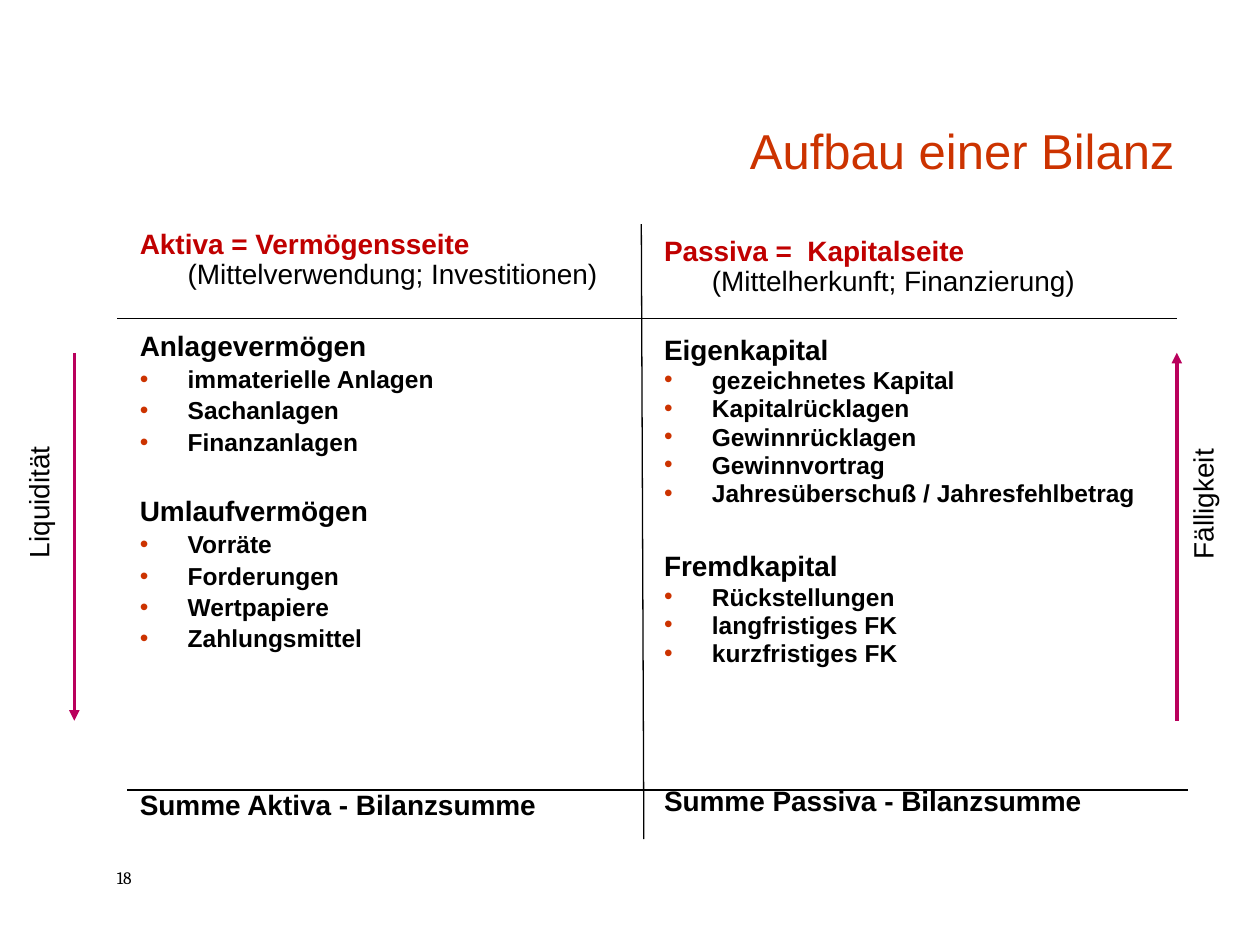
from dataclasses import dataclass

from lxml.etree import SubElement
from pptx import Presentation
from pptx.dml.color import RGBColor
from pptx.enum.shapes import MSO_CONNECTOR
from pptx.enum.text import MSO_ANCHOR, MSO_AUTO_SIZE, PP_ALIGN
from pptx.oxml.ns import qn
from pptx.util import Inches, Pt

BLACK = "000000"
ORANGE = "CC3300"
RED = "C00000"
MAGENTA = "B9005C"
HEADING_SIZE = 16
ITEM_SIZE = 14
INDENT = 0.38


@dataclass
class Box:
    left: float
    top: float
    width: float
    height: float


@dataclass
class Group:
    heading: str
    items: list[str]
    gap: float


@dataclass
class BalanceSide:
    box: Box
    name: str
    purpose: str
    break_after_name: bool
    groups: list[Group]
    spacing: float


@dataclass
class Line:
    start: tuple[float, float]
    end: tuple[float, float]
    color: str = BLACK
    width: float = 0.75
    arrow: bool = False


@dataclass
class Label:
    box: Box
    text: str
    size: float = HEADING_SIZE
    font: str = "Arial"
    vertical: bool = False


SIDES = [
    BalanceSide(
        Box(10.1, 23.73, 43.3, 70), "Aktiva = Vermögensseite ",
        "(Mittelverwendung; Investitionen)", False,
        [
            Group("Anlagevermögen",
                  ["immaterielle Anlagen", "Sachanlagen", "Finanzanlagen"], 23.4),
            Group("Umlaufvermögen",
                  ["Vorräte", "Forderungen", "Wertpapiere", "Zahlungsmittel"], 23.4),
            Group("Summe Aktiva - Bilanzsumme", [], 79),
        ],
        0.9,
    ),
    BalanceSide(
        Box(51.7, 24.4, 40.8, 69.33), "Passiva =  Kapitalseite",
        "(Mittelherkunft; Finanzierung)", True,
        [
            Group("Eigenkapital",
                  ["gezeichnetes Kapital", "Kapitalrücklagen", "Gewinnrücklagen",
                   "Gewinnvortrag", "Jahresüberschuß / Jahresfehlbetrag"], 23.6),
            Group("Fremdkapital",
                  ["Rückstellungen", "langfristiges FK", "kurzfristiges FK"], 27.3),
            Group("Summe Passiva - Bilanzsumme", [], 70),
        ],
        0.8,
    ),
]

LINES = [
    Line((9.3, 33.73), (93.4, 33.73)),
    Line((50.9, 23.73), (51.1, 88.8)),
    Line((10.1, 83.6), (94.3, 83.6)),
    Line((5.9, 37.33), (5.9, 76.27), MAGENTA, 0, True),
    Line((93.4, 76.27), (93.4, 37.33), MAGENTA, 0, True),
]

LABELS = [
    Label(Box(1.2, 39.47, 4.7, 20.93), "Liquidität", vertical=True),
    Label(Box(93.6, 39.6, 4.7, 20.93), "Fälligkeit", vertical=True),
    Label(Box(8.3, 91.07, 6.7, 3.87), "18", 10, "Cambria"),
]

presentation = Presentation()
presentation.slide_width = Inches(10)
presentation.slide_height = Inches(7.5)


def across(percent: float) -> int:
    return round(presentation.slide_width * percent / 100)


def down(percent: float) -> int:
    return round(presentation.slide_height * percent / 100)


def color_of(value: str) -> RGBColor:
    return RGBColor.from_string(value)


def place(shape, box: Box) -> None:
    shape.left, shape.top = across(box.left), down(box.top)
    shape.width, shape.height = across(box.width), down(box.height)


def add_run(paragraph, text: str, size: float, color: str = BLACK,
            bold: bool = False, font: str = "Arial") -> None:
    run = paragraph.add_run()
    run.text = text
    run.font.name = font
    run.font.size = Pt(size)
    run.font.bold = bold
    run.font.color.rgb = color_of(color)


def format_paragraph(paragraph, spacing: float, before: float, bullet: bool = False) -> None:
    paragraph.line_spacing = spacing
    paragraph.space_before = Pt(before)
    paragraph.space_after = Pt(0)
    properties = paragraph._p.get_or_add_pPr()
    properties.set("marL", str(Inches(INDENT)))
    properties.set("indent", str(-Inches(INDENT)))
    if bullet:
        bullet_color = SubElement(properties, qn("a:buClr"))
        SubElement(bullet_color, qn("a:srgbClr"), val=ORANGE)
        SubElement(properties, qn("a:buFont"), typeface="Arial")
        SubElement(properties, qn("a:buChar"), char="•")
    else:
        SubElement(properties, qn("a:buNone"))


def fill_title(shape) -> None:
    place(shape, Box(20.9, 5.6, 73.3, 14))
    frame = shape.text_frame
    frame.auto_size = MSO_AUTO_SIZE.NONE
    frame.vertical_anchor = MSO_ANCHOR.BOTTOM
    paragraph = frame.paragraphs[0]
    paragraph.alignment = PP_ALIGN.RIGHT
    add_run(paragraph, "Aufbau einer Bilanz", 28, ORANGE)


def fill_side(shape, side: BalanceSide) -> None:
    place(shape, side.box)
    frame = shape.text_frame
    frame.auto_size = MSO_AUTO_SIZE.NONE
    paragraph = frame.paragraphs[0]
    format_paragraph(paragraph, 0.9, 0)
    add_run(paragraph, side.name, HEADING_SIZE, RED, True)
    if side.break_after_name:
        paragraph.add_line_break()
    add_run(paragraph, side.purpose, HEADING_SIZE)
    for group in side.groups:
        paragraph = frame.add_paragraph()
        format_paragraph(paragraph, side.spacing, group.gap)
        add_run(paragraph, group.heading, HEADING_SIZE, bold=True)
        for item in group.items:
            paragraph = frame.add_paragraph()
            format_paragraph(paragraph, side.spacing, 2.8, True)
            add_run(paragraph, item, ITEM_SIZE, bold=True)


def draw_line(slide, line: Line) -> None:
    connector = slide.shapes.add_connector(
        MSO_CONNECTOR.STRAIGHT, across(line.start[0]), down(line.start[1]),
        across(line.end[0]), down(line.end[1]))
    connector.line.color.rgb = color_of(line.color)
    connector.line.width = Pt(line.width)
    if line.arrow:
        SubElement(connector.line._get_or_add_ln(), qn("a:tailEnd"), type="triangle")
    SubElement(connector._element.spPr, qn("a:effectLst"))


def draw_label(slide, label: Label) -> None:
    shape = slide.shapes.add_textbox(0, 0, 0, 0)
    place(shape, label.box)
    frame = shape.text_frame
    frame.word_wrap = True
    if label.vertical:
        frame.margin_left = frame.margin_right = Inches(0.05)
        frame.margin_top = frame.margin_bottom = Inches(0.1)
        frame._txBody.bodyPr.set("vert", "vert270")
    add_run(frame.paragraphs[0], label.text, label.size, font=label.font)


slide = presentation.slides.add_slide(presentation.slide_layouts[3])
title, *bodies = slide.placeholders
fill_title(title)
for body, side in zip(bodies, SIDES):
    fill_side(body, side)
for line in LINES:
    draw_line(slide, line)
for label in LABELS:
    draw_label(slide, label)
presentation.save("out.pptx")
